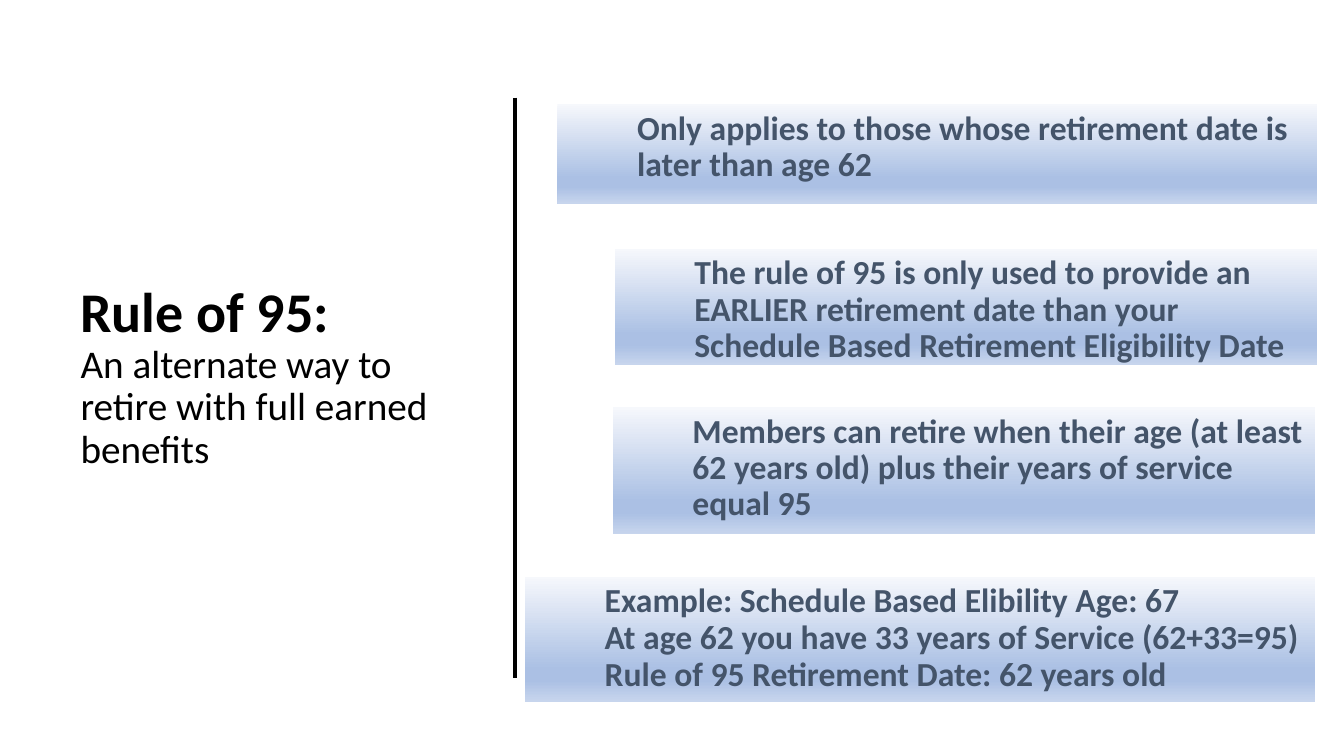
from copy import deepcopy

from lxml import etree
from pptx import Presentation
from pptx.dml.color import RGBColor
from pptx.enum.shapes import MSO_CONNECTOR, MSO_SHAPE
from pptx.enum.text import MSO_ANCHOR, PP_ALIGN
from pptx.oxml.ns import qn
from pptx.util import Cm, Pt

RECTANGLE = MSO_SHAPE.RECTANGLE
STRAIGHT = MSO_CONNECTOR.STRAIGHT
TOP, MIDDLE = MSO_ANCHOR.TOP, MSO_ANCHOR.MIDDLE
LEFT = PP_ALIGN.LEFT

FONT = "Calibri"
BLACK, SLATE = "000000", "44546A"
BAR_GRADIENT = [(0, "F6F8FC"), (0.74, "ABC0E4"), (0.83, "ABC0E4"), (1, "C7D5ED")]

HEADING = "Rule of 95: "
SUBHEADING = "An alternate way to retire with full earned benefits"
HEADING_BOX = (1.78, 5.61, 10.16, 7.82)
DIVIDER = (12.98, 2.46, 17.09)

RULES = [
    ((14.05, 2.62, 19.15, 2.51),
     ["Only applies to those whose retirement date is later than age 62"]),
    ((15.49, 6.27, 17.7, 2.92),
     ["The rule of 95 is only used to provide an EARLIER retirement date "
      "than your Schedule Based Retirement Eligibility Date"]),
    ((15.44, 10.26, 17.7, 3.2),
     ["Members can retire when their age (at least 62 years old) "
      "plus their years of service equal 95"]),
    ((13.23, 14.53, 19.91, 3.15),
     ["Example: Schedule Based Elibility Age: 67",
      "At age 62 you have 33 years of Service (62+33=95)",
      "Rule of 95 Retirement Date: 62 years old"]),
]


def rgb(value):
    return RGBColor.from_string(value)


def place(box):
    return [Cm(length) for length in box]


def style_run(run, size, color, bold):
    run.font.name = FONT
    run.font.size = Pt(size)
    run.font.bold = bold
    run.font.color.rgb = rgb(color)


def fill_bar(bar):
    bar.fill.gradient()
    bar.fill.gradient_angle = 270
    stop_list = bar._element.spPr.find(".//" + qn("a:gsLst"))
    while len(stop_list) < len(BAR_GRADIENT):
        stop_list.append(deepcopy(stop_list[0]))
    for stop, (position, color) in zip(bar.fill.gradient_stops, BAR_GRADIENT):
        stop.position = position
        stop.color.rgb = rgb(color)


def add_heading(slide):
    frame = slide.shapes.add_textbox(*place(HEADING_BOX)).text_frame
    frame.word_wrap = True
    frame.vertical_anchor = MIDDLE
    paragraph = frame.paragraphs[0]
    paragraph.text = HEADING + "\v" + SUBHEADING
    paragraph.line_spacing = 0.9
    for run, size, bold in zip(paragraph.runs, (40, 28), (True, False)):
        style_run(run, size, BLACK, bold)


def add_rule(slide, box, lines):
    bar = slide.shapes.add_shape(RECTANGLE, *place(box))
    bar.shadow.inherit = False
    bar.line.fill.background()
    fill_bar(bar)
    frame = bar.text_frame
    frame.word_wrap = True
    frame.vertical_anchor = TOP
    frame.margin_left = Cm(2.01)
    frame.margin_top = frame.margin_right = frame.margin_bottom = Cm(0.18)
    frame.text = "\n".join(lines)
    for paragraph in frame.paragraphs:
        paragraph.alignment = LEFT
        paragraph.line_spacing = 0.9
        paragraph.space_after = Pt(0.3)
        style_run(paragraph.runs[0], 24, SLATE, True)


def add_divider(slide):
    x, top, bottom = place(DIVIDER)
    divider = slide.shapes.add_connector(STRAIGHT, x, top, x, bottom)
    divider.line.color.rgb = rgb(BLACK)
    divider.line.width = Pt(3)
    etree.SubElement(divider._element.spPr, qn("a:effectLst"))


def main():
    deck = Presentation()
    deck.slide_width, deck.slide_height = Cm(33.87), Cm(19.05)
    slide = deck.slides.add_slide(deck.slide_layouts[6])
    add_heading(slide)
    for box, lines in RULES:
        add_rule(slide, box, lines)
    add_divider(slide)
    deck.save("out.pptx")


if __name__ == "__main__":
    main()
